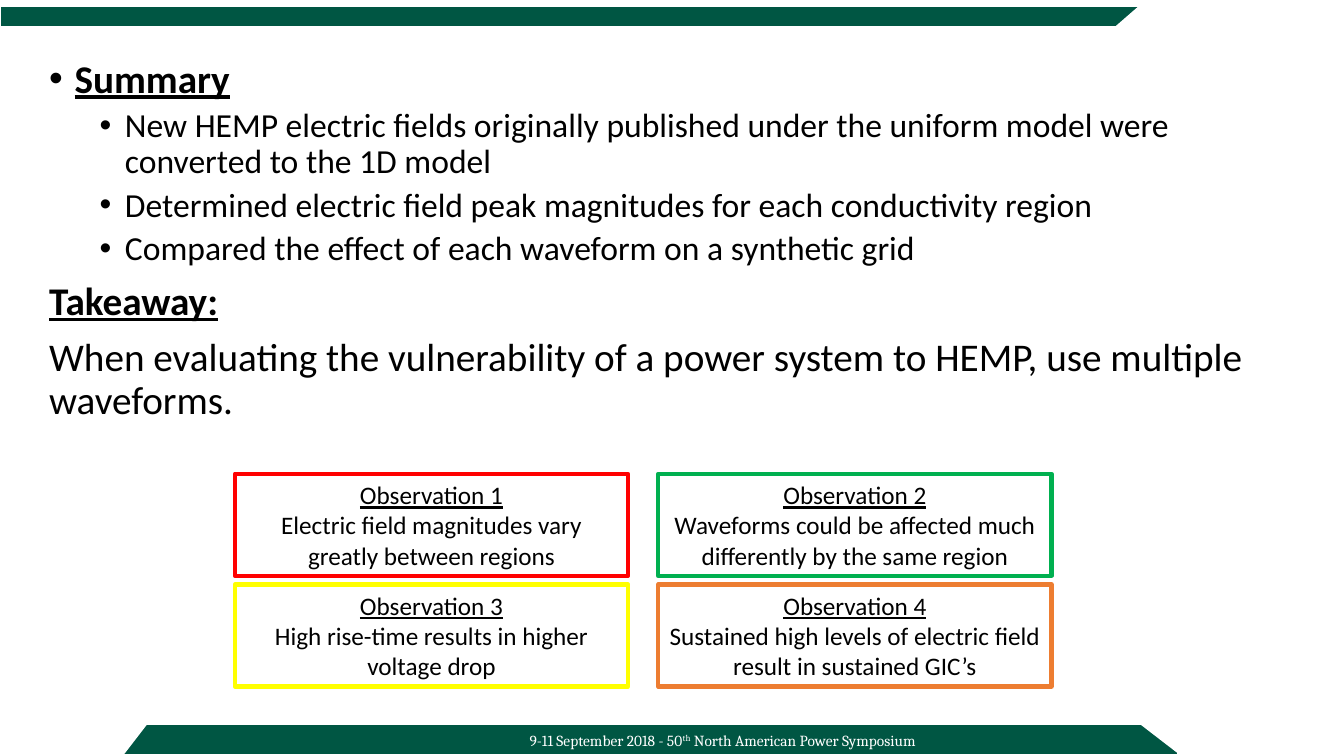
from lxml import etree
from pptx import Presentation
from pptx.dml.color import RGBColor
from pptx.enum.shapes import MSO_SHAPE
from pptx.enum.text import MSO_ANCHOR, PP_ALIGN
from pptx.oxml.ns import qn
from pptx.util import Cm, Pt

RECT = MSO_SHAPE.RECTANGLE
TRIANGLE = MSO_SHAPE.RIGHT_TRIANGLE
CENTER = PP_ALIGN.CENTER
MIDDLE = MSO_ANCHOR.MIDDLE

GREEN = RGBColor(0x00, 0x56, 0x43)
WHITE = RGBColor(0xFF, 0xFF, 0xFF)
BLACK = RGBColor(0x00, 0x00, 0x00)
RED = RGBColor(0xFF, 0x00, 0x00)
LIGHT_GREEN = RGBColor(0x00, 0xB0, 0x50)
YELLOW = RGBColor(0xFF, 0xFF, 0x00)
ORANGE = RGBColor(0xED, 0x7D, 0x31)

BODY = [
    ("Summary", "heading", 0),
    ("New HEMP electric fields originally published under the uniform model "
     "were converted to the 1D model", "item", 1),
    ("Determined electric field peak magnitudes for each conductivity region", "item", 1),
    ("Compared the effect of each waveform on a synthetic grid", "item", 1),
    ("Takeaway:", "heading", None),
    ("When evaluating the vulnerability of a power system to HEMP, "
     "use multiple waveforms.", "plain", None),
]
OBSERVATIONS = [
    ("Electric field magnitudes vary greatly between regions", RED),
    ("Waveforms could be affected much differently by the same region", LIGHT_GREEN),
    ("High rise-time results in higher voltage drop", YELLOW),
    ("Sustained high levels of electric field result in sustained GIC’s", ORANGE),
]


def add_block(s, kind, left, top, width, height, fill=None, line=None, weight=1, turn=0):
    sp = s.shapes.add_shape(kind, Cm(left), Cm(top), Cm(width), Cm(height))
    sp.shadow.inherit = False
    sp.rotation = turn
    if fill is None:
        sp.fill.background()
    else:
        sp.fill.solid()
        sp.fill.fore_color.rgb = fill
    if line is None:
        sp.line.fill.background()
    else:
        sp.line.color.rgb = line
        sp.line.width = Pt(weight)
    return sp


def add_text(s, left, top, width, height):
    tf = s.shapes.add_textbox(Cm(left), Cm(top), Cm(width), Cm(height)).text_frame
    tf.word_wrap = True
    return tf


def style(r, size, color=BLACK, name="Calibri", bold=False, underline=False):
    r.font.size = Pt(size)
    r.font.name = name
    r.font.color.rgb = color
    r.font.bold = bold
    r.font.underline = underline


def add_bullet(p, level):
    pPr = p._p.get_or_add_pPr()
    pPr.set("marL", str(Cm(0.64 + 1.27 * level)))
    pPr.set("indent", str(-Cm(0.64)))
    etree.SubElement(pPr, qn("a:buFont")).set("typeface", "Arial")
    etree.SubElement(pPr, qn("a:buChar")).set("char", "•")


def top_bar(s, left, top, width, height):
    add_block(s, RECT, left, top, width, height, GREEN, WHITE)
    add_block(s, TRIANGLE, left + width - 0.58, top - 0.05, 0.53, 0.61, WHITE, WHITE, turn=270)


def footer(s, left, top, width, height):
    add_block(s, RECT, left, top, width, height, GREEN, WHITE)
    add_block(s, TRIANGLE, left + width - 0.99, top - 0.03, 1.09, 0.84, WHITE, turn=180)
    add_block(s, TRIANGLE, left - 0.15, top - 0.13, 1.09, 0.84, WHITE, turn=90)
    p = add_text(s, left + 8.08, top + 0.05, 14.07, 0.74).paragraphs[0]
    p.alignment = CENTER
    for text in ("9-11 September 2018 - 50", "th", " North American Power Symposium"):
        r = p.add_run()
        r.text = text
        style(r, 11, WHITE, "Cambria")
    p.runs[1].font._element.set("baseline", "30000")


def body(s, left, top, width, height):
    tf = add_text(s, left, top, width, height)
    for i, (text, role, level) in enumerate(BODY):
        p = tf.add_paragraph() if i else tf.paragraphs[0]
        p.text = text
        p.level = level or 0
        p.line_spacing = 0.9
        if i:
            p.space_before = Pt(5 if role == "item" else 10)
        if level is not None:
            add_bullet(p, level)
        heading = role == "heading"
        style(p.runs[0], 24 if role == "item" else 28, bold=heading, underline=heading)


def observations(s, left, top, width, height):
    box_width, box_height = 9.91, 2.57
    for i, (text, color) in enumerate(OBSERVATIONS):
        row, column = divmod(i, 2)
        sp = add_block(s, RECT, left + column * (width - box_width),
                       top + row * (height - box_height),
                       box_width, box_height, line=color, weight=3)
        tf = sp.text_frame
        tf.word_wrap = True
        tf.vertical_anchor = MIDDLE
        tf.text = f"Observation {i + 1}\n{text}"
        for p in tf.paragraphs:
            p.alignment = CENTER
            style(p.runs[0], 18, underline=p.text.startswith("Observation"))


def main():
    prs = Presentation()
    prs.slide_width, prs.slide_height = Cm(33.87), Cm(19.05)
    s = prs.slides.add_slide(prs.slide_layouts[6])
    footer(s, 3.1, 18.24, 26.57, 0.79)
    top_bar(s, 0, 0.15, 28.75, 0.53)
    body(s, 0.99, 1.37, 31.9, 10.16)
    observations(s, 5.92, 11.94, 20.58, 5.36)
    prs.save("out.pptx")


if __name__ == "__main__":
    main()
